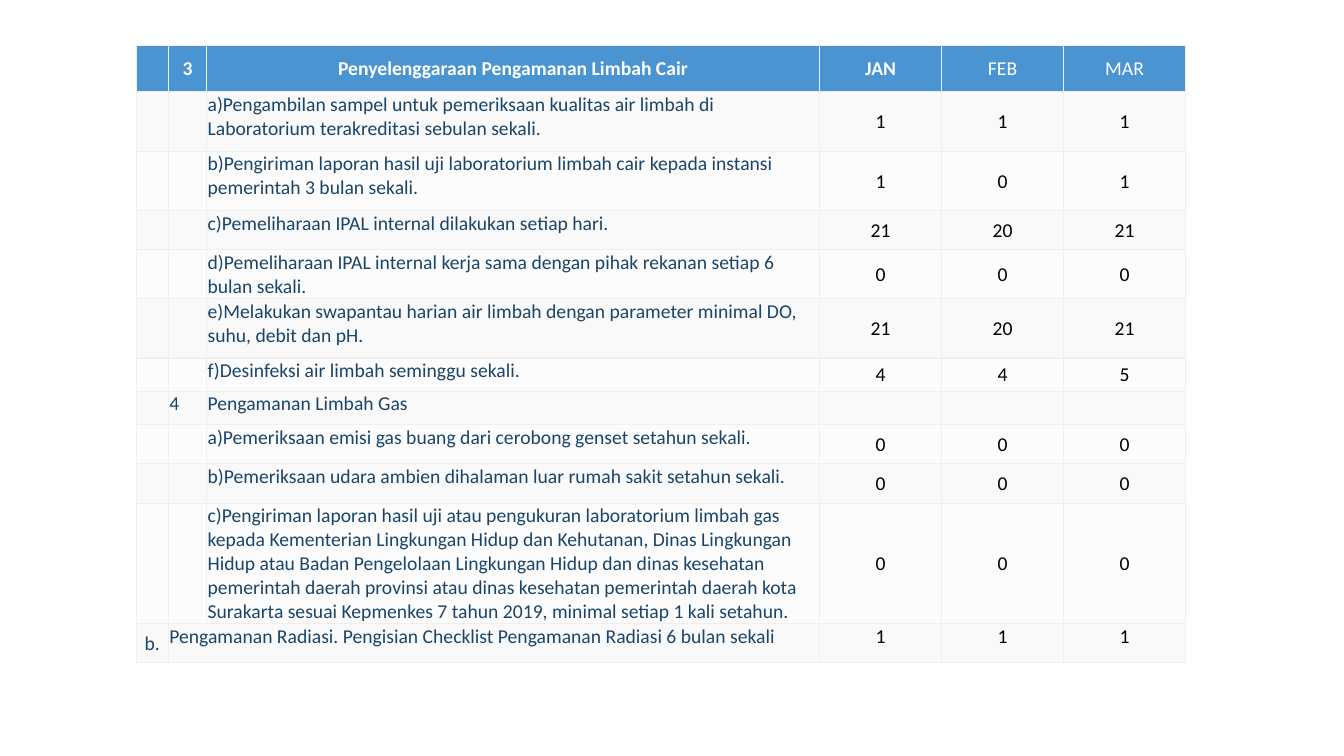
from lxml import etree
from pptx import Presentation
from pptx.dml.color import RGBColor
from pptx.enum.text import MSO_ANCHOR, PP_ALIGN
from pptx.oxml.ns import qn
from pptx.util import Inches, Pt

TOP, MIDDLE = MSO_ANCHOR.TOP, MSO_ANCHOR.MIDDLE
LEFT, CENTER = PP_ALIGN.LEFT, PP_ALIGN.CENTER

# Content: group, number, activity, then one value per month
HEADER = ("", "3", "Penyelenggaraan Pengamanan Limbah Cair", "JAN", "FEB", "MAR")
ACTIVITIES = [
    ("", "", "a)Pengambilan sampel untuk pemeriksaan kualitas air limbah di "
     "Laboratorium terakreditasi sebulan sekali.", 1, 1, 1),
    ("", "", "b)Pengiriman laporan hasil uji laboratorium limbah cair kepada "
     "instansi pemerintah 3 bulan sekali.", 1, 0, 1),
    ("", "", "c)Pemeliharaan IPAL internal dilakukan setiap hari.", 21, 20, 21),
    ("", "", "d)Pemeliharaan IPAL internal kerja sama dengan pihak rekanan "
     "setiap 6 bulan sekali.", 0, 0, 0),
    ("", "", "e)Melakukan swapantau harian air limbah dengan parameter minimal "
     "DO, suhu, debit dan pH.", 21, 20, 21),
    ("", "", "f)Desinfeksi air limbah seminggu sekali.", 4, 4, 5),
    ("", "4", "Pengamanan Limbah Gas", "", "", ""),
    ("", "", "a)Pemeriksaan emisi gas buang dari cerobong genset setahun sekali.",
     0, 0, 0),
    ("", "", "b)Pemeriksaan udara ambien dihalaman luar rumah sakit setahun sekali.",
     0, 0, 0),
    ("", "", "c)Pengiriman laporan hasil uji atau pengukuran laboratorium limbah "
     "gas kepada Kementerian Lingkungan Hidup dan Kehutanan, Dinas Lingkungan "
     "Hidup atau Badan Pengelolaan Lingkungan Hidup dan dinas kesehatan "
     "pemerintah daerah provinsi atau dinas kesehatan pemerintah daerah kota "
     "Surakarta sesuai Kepmenkes 7 tahun 2019, minimal setiap 1 kali setahun.",
     0, 0, 0),
    ("b.", "Pengamanan Radiasi. Pengisian Checklist Pengamanan Radiasi 6 bulan "
     "sekali", "", 1, 1, 1),
]
ROWS = [HEADER] + ACTIVITIES
LAST = len(ROWS) - 1
COLUMN_WIDTHS = [0.32, 0.38, 6.08, 1.21, 1.21, 1.21]
ROW_HEIGHTS = [0.46, 0.59, 0.59, 0.39, 0.44, 0.59, 0.33, 0.33, 0.39, 0.39, 1.05, 0.39]
FIRST_MONTH = 3

HEADER_FILL, BANDS, BORDER = "4994D1", ("FCFCFC", "F9F9F9"), "EFEFEF"
WHITE, NAVY, BLACK = "FFFFFF", "1A4568", "000000"


def color(hex_value):
    return RGBColor.from_string(hex_value)


def write(cell, text, *, ink=NAVY, bold=False, align=LEFT, anchor=TOP, size=14):
    cell.margin_left = cell.margin_top = cell.margin_right = Inches(0.01)
    cell.margin_bottom = 0
    cell.vertical_anchor = anchor
    paragraph = cell.text_frame.paragraphs[0]
    paragraph.alignment = align
    if text == "":  # keeps an empty cell from stretching its row
        etree.SubElement(paragraph._p, qn("a:endParaRPr"), sz=str(size * 100))
        return
    run = paragraph.add_run()
    run.text = str(text)
    run.font.name, run.font.size, run.font.bold = "Calibri", Pt(size), bold
    run.font.color.rgb = color(ink)


def paint(cell, fill):
    properties = cell._tc.get_or_add_tcPr()
    for side in ("lnL", "lnR", "lnT", "lnB"):
        line = etree.SubElement(properties, qn("a:" + side), w=str(Pt(1)))
        solid = etree.SubElement(line, qn("a:solidFill"))
        etree.SubElement(solid, qn("a:srgbClr"), val=BORDER)
    cell.fill.solid()
    cell.fill.fore_color.rgb = color(fill)


def cell_format(row, column):
    if row == 0:
        return dict(ink=WHITE, bold=column <= FIRST_MONTH, align=CENTER, anchor=MIDDLE)
    if column >= FIRST_MONTH:
        return dict(ink=BLACK, align=CENTER, anchor=TOP if row == LAST else MIDDLE)
    if column == 0:
        return dict(align=CENTER, anchor=MIDDLE)
    return {}


prs = Presentation()
prs.slide_width, prs.slide_height = Inches(13.33), Inches(7.5)
slide = prs.slides.add_slide(prs.slide_layouts[6])

# Table grid
schedule = slide.shapes.add_table(
    len(ROWS), len(COLUMN_WIDTHS), Inches(1.35), Inches(0.45),
    Inches(sum(COLUMN_WIDTHS)), Inches(sum(ROW_HEIGHTS))).table
schedule.first_row = schedule.horz_banding = False
for column, width in zip(schedule.columns, COLUMN_WIDTHS):
    column.width = Inches(width)
for row, height in zip(schedule.rows, ROW_HEIGHTS):
    row.height = Inches(height)

# Cells
for r, values in enumerate(ROWS):
    for c, value in enumerate(values):
        cell = schedule.cell(r, c)
        write(cell, value, **cell_format(r, c))
        paint(cell, BANDS[r % 2] if r else HEADER_FILL)
schedule.cell(LAST, 1).merge(schedule.cell(LAST, 2))

prs.save("out.pptx")
